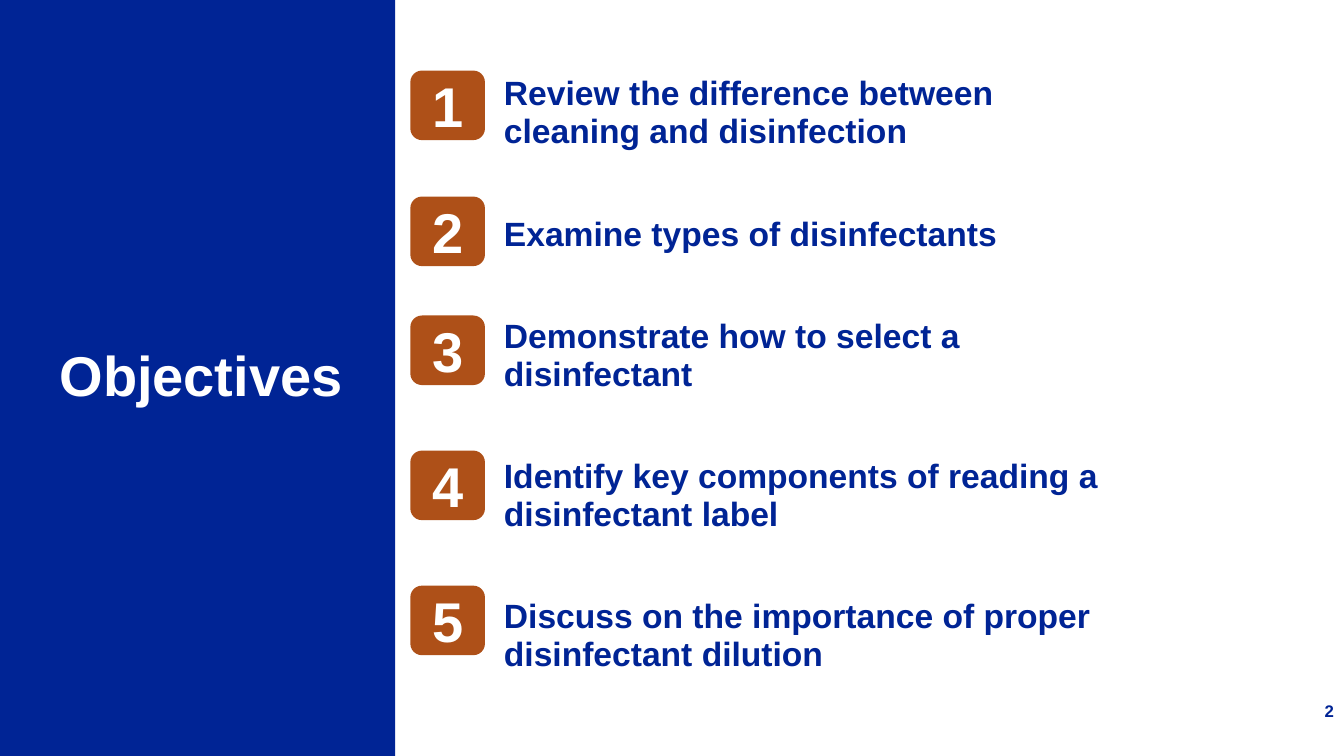
from pptx import Presentation
from pptx.dml.color import RGBColor
from pptx.enum.shapes import MSO_SHAPE as Shape
from pptx.enum.text import MSO_ANCHOR as Anchor, PP_ALIGN as Align
from pptx.util import Inches, Pt

NAVY, RUST, WHITE = "002495", "AE5018", "FFFFFF"
GOALS = [
    (0.7, "Review the difference between cleaning and disinfection"),
    (1.95, "Examine types of disinfectants"),
    (3.13, "Demonstrate how to select a disinfectant"),
    (4.47, "Identify key components of reading a disinfectant label"),
    (5.81, "Discuss on the importance of proper disinfectant dilution"),
]


def paint(target, color):
    target.solid()
    target.fore_color.rgb = RGBColor.from_string(color)


def write(para, text, size, color, align=Align.LEFT):
    para.alignment = align
    run = para.add_run()
    run.text = text
    run.font.name = "Arial"
    run.font.size = Pt(size)
    run.font.bold = True
    paint(run.font.fill, color)


def place(shape, left, top, width, height):
    shape.left, shape.top = Inches(left), Inches(top)
    shape.width, shape.height = Inches(width), Inches(height)


def block(slide, kind, color, left, top, width, height):
    shape = slide.shapes.add_shape(
        kind, Inches(left), Inches(top), Inches(width), Inches(height))
    shape.shadow.inherit = False
    paint(shape.fill, color)
    shape.line.fill.background()
    return shape


def label(slide, left, top, width, height, anchor):
    box = slide.shapes.add_textbox(
        Inches(left), Inches(top), Inches(width), Inches(height))
    frame = box.text_frame
    frame.word_wrap = True
    frame.vertical_anchor = anchor
    return frame


def panel(slide, left, top, width, height):
    back = block(slide, Shape.RECTANGLE, NAVY, left, top, width, height)
    title = slide.shapes.title
    back.element.addnext(title.element)
    place(title, left + 0.49, top + 1.95, width - 0.8, 3.6)
    frame = title.text_frame
    frame.word_wrap = True
    frame.vertical_anchor = Anchor.MIDDLE
    para = frame.paragraphs[0]
    para.line_spacing = 0.9
    write(para, "Objectives", 40, WHITE)


def goals(slide, left, top, width, height):
    frame = label(slide, left + 0.83, top, width - 0.83, height, Anchor.TOP)
    for num, (y, text) in enumerate(GOALS, 1):
        para = frame.paragraphs[0] if num == 1 else frame.add_paragraph()
        para.line_spacing = 0.94
        para.space_before = Pt(0 if num == 1 else 46)
        write(para, text, 24, NAVY)
        badge = block(slide, Shape.ROUNDED_RECTANGLE, RUST, left, y, 0.74, 0.69)
        badge.text_frame.vertical_anchor = Anchor.MIDDLE
        write(badge.text_frame.paragraphs[0], str(num), 40, WHITE, Align.CENTER)


def footer(slide, left, top, width, height):
    frame = label(slide, left, top, width, height, Anchor.MIDDLE)
    write(frame.paragraphs[0], "2", 12, NAVY, Align.RIGHT)


def main():
    deck = Presentation()
    deck.slide_width, deck.slide_height = Inches(13.33), Inches(7.5)
    slide = deck.slides.add_slide(deck.slide_layouts[5])
    paint(slide.background.fill, WHITE)
    panel(slide, 0, 0, 3.92, 7.5)
    goals(slide, 4.07, 0.7, 7, 5.34)
    footer(slide, 10.33, 6.85, 3, 0.4)
    deck.save("out.pptx")


if __name__ == "__main__":
    main()
